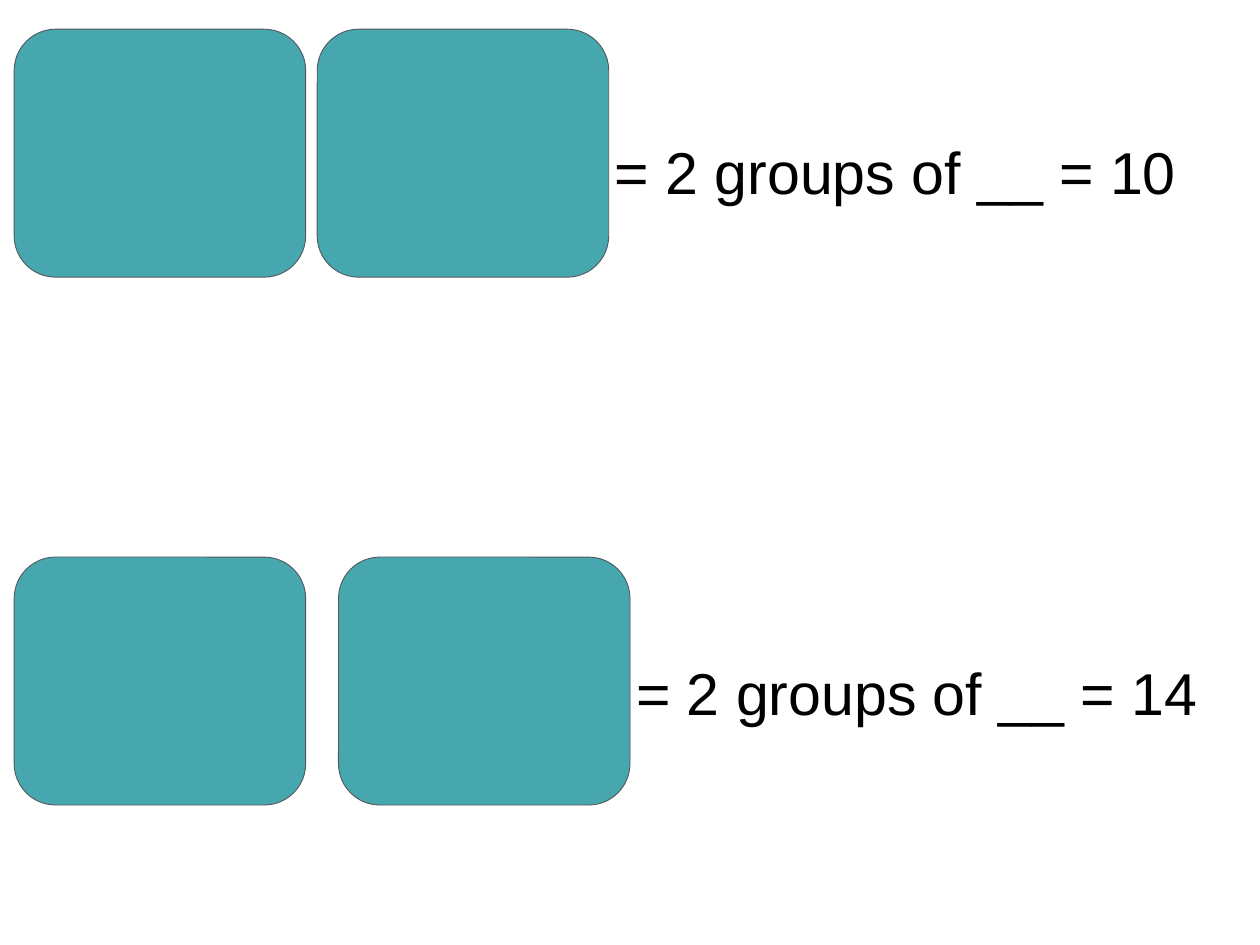
from pptx import Presentation
from pptx.dml.color import RGBColor
from pptx.enum import shapes, text
from pptx.util import Inches, Pt

# Content: each row has a card top, card lefts, the equation and its position
ROWS = [
    {"top": 0.33, "cards": (0.16, 3.58), "equation": "= 2 groups of __ = 10", "at": (6.84, 1.43)},
    {"top": 6.29, "cards": (0.16, 3.82), "equation": "= 2 groups of __ = 14", "at": (7.08, 7.31)},
]
SLIDE = (14.22, 10.67)
CARD = (3.29, 2.8)
EQUATION = (7.14, 1.41)
INSET = 0.1
CORNER = 0.167

THEME = {
    "card": RGBColor.from_string("46A7AE"),
    "outline": RGBColor.from_string("53585F"),
    "ink": RGBColor.from_string("000000"),
    "font": "Arial",
    "size": Pt(48),
    "line": Pt(0.75),
}


def add_card(slide, left, top):
    sp = slide.shapes.add_shape(
        shapes.MSO_SHAPE.ROUNDED_RECTANGLE, *map(Inches, (left, top, *CARD)))
    sp.adjustments[0] = CORNER
    sp.shadow.inherit = False
    sp.fill.solid()
    sp.fill.fore_color.rgb = THEME["card"]
    sp.line.color.rgb = THEME["outline"]
    sp.line.width = THEME["line"]


def add_equation(slide, words, at):
    tf = slide.shapes.add_textbox(*map(Inches, (*at, *EQUATION))).text_frame
    tf.word_wrap = True
    tf.vertical_anchor = text.MSO_ANCHOR.TOP
    tf.margin_left = tf.margin_right = tf.margin_top = tf.margin_bottom = Inches(INSET)
    r = tf.paragraphs[0].add_run()
    r.text = words
    r.font.name = THEME["font"]
    r.font.size = THEME["size"]
    r.font.color.rgb = THEME["ink"]


def main():
    prs = Presentation()
    prs.slide_width, prs.slide_height = map(Inches, SLIDE)
    slide = prs.slides.add_slide(prs.slide_layouts[6])

    # Cards and equation of each row
    for row in ROWS:
        for left in row["cards"]:
            add_card(slide, left, row["top"])
        add_equation(slide, row["equation"], row["at"])

    prs.save("out.pptx")


if __name__ == "__main__":
    main()
